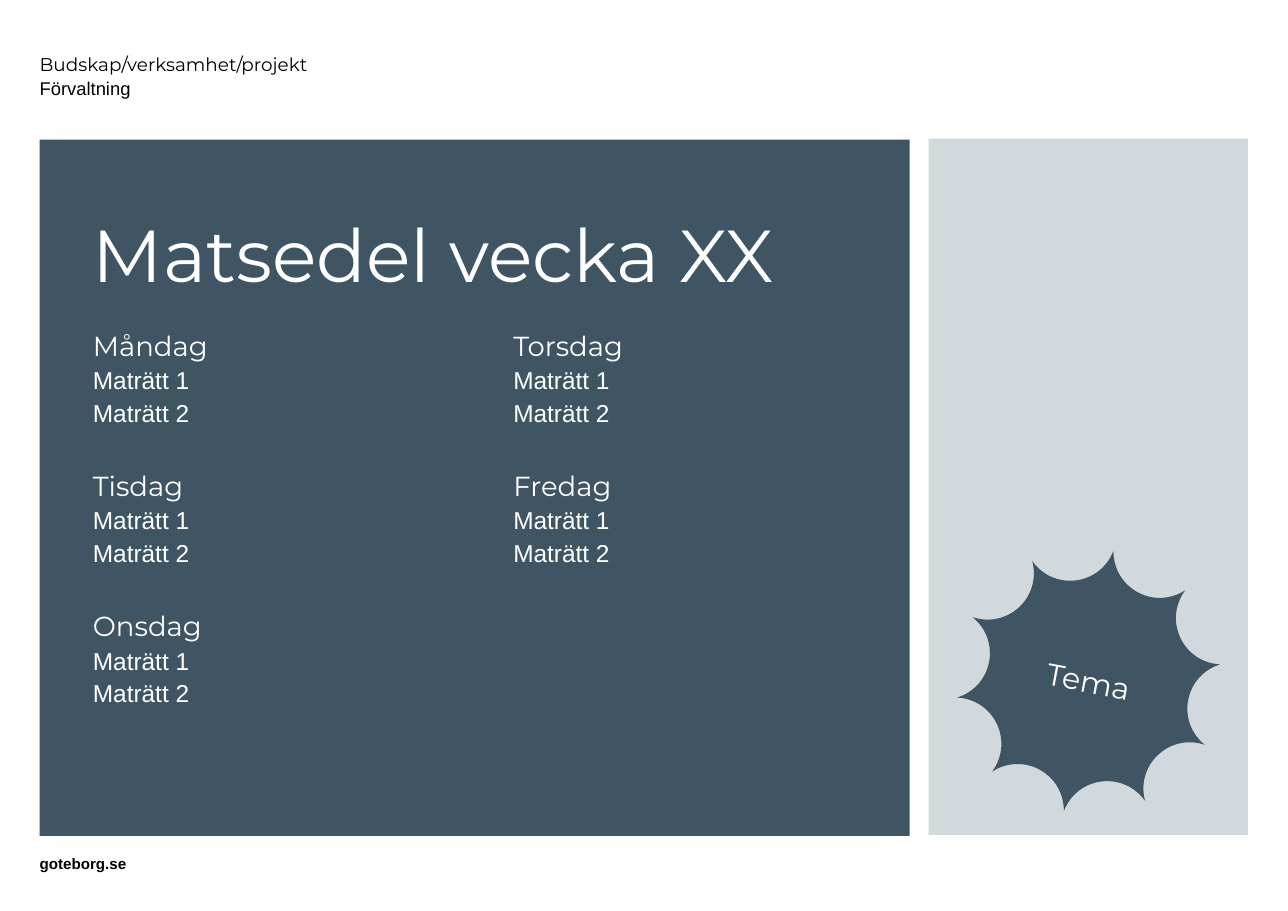
from dataclasses import dataclass
from math import cos, radians, sin

from lxml.etree import SubElement
from pptx import Presentation
from pptx.dml.color import RGBColor
from pptx.enum.shapes import MSO_SHAPE
from pptx.enum.text import MSO_ANCHOR, MSO_AUTO_SIZE, PP_ALIGN
from pptx.oxml.ns import qn
from pptx.util import Cm, Pt


@dataclass(frozen=True)
class Theme:
    slate: RGBColor = RGBColor(0x3F, 0x55, 0x64)
    mist: RGBColor = RGBColor(0xD1, 0xD9, 0xDC)
    white: RGBColor = RGBColor(0xFF, 0xFF, 0xFF)
    black: RGBColor = RGBColor(0, 0, 0)
    display: str = "Montserrat"
    body: str = "Arial"
    title_size: float = 67.9
    theme_size: float = 28
    day_size: float = 25.4
    dish_size: float = 22.6
    header_size: float = 17
    footer_size: float = 14


theme = Theme()


def prepare_frame(shape, anchor, side=0, edge=0):
    frame = shape.text_frame
    frame.word_wrap = True
    frame.auto_size = MSO_AUTO_SIZE.NONE
    frame.vertical_anchor = anchor
    frame.margin_left = frame.margin_right = Cm(side)
    frame.margin_top = frame.margin_bottom = Cm(edge)
    return frame


def add_line(frame, text, font, size, color, spacing=None, before=0, align=PP_ALIGN.LEFT, bold=False):
    paragraph = frame.paragraphs[0]
    if paragraph.runs:
        paragraph = frame.add_paragraph()
    paragraph.alignment = align
    paragraph.line_spacing = spacing
    paragraph.space_before = Pt(before)
    run = paragraph.add_run()
    run.text = text
    run.font.name = font
    run.font.size = Pt(size)
    run.font.bold = bold
    run.font.color.rgb = color


presentation = Presentation()
presentation.slide_width = Cm(42)
presentation.slide_height = Cm(29.7)
slide = presentation.slides.add_slide(presentation.slide_layouts[5])
shapes = slide.shapes

panels = [(30.28, 4.52, 10.41, theme.mist), (1.29, 4.55, 28.37, theme.slate)]
for left, top, width, color in panels:
    panel = shapes.add_shape(MSO_SHAPE.RECTANGLE, Cm(left), Cm(top), Cm(width), Cm(22.7))
    panel.shadow.inherit = False
    panel.fill.solid()
    panel.fill.fore_color.rgb = color
    panel.line.fill.background()

title = shapes.title
title.left, title.top, title.width, title.height = Cm(3.03), Cm(6.99), Cm(25.86), Cm(2.9)
panel.element.addnext(title.element)
frame = prepare_frame(title, MSO_ANCHOR.MIDDLE)
add_line(frame, "Matsedel vecka XX", theme.display, theme.title_size, theme.white, 0.9)

menu_columns = [(3.03, ["Måndag", "Tisdag", "Onsdag"]), (16.74, ["Torsdag", "Fredag"])]
for left, days in menu_columns:
    menu = shapes.add_textbox(Cm(left), Cm(10.84), Cm(12.17), Cm(15.06))
    frame = prepare_frame(menu, MSO_ANCHOR.TOP)
    for index, day in enumerate(days):
        gap = 41.9 if index else 0
        add_line(frame, day, theme.display, theme.day_size, theme.white, 0.9, gap)
        for dish in ["Maträtt 1", "Maträtt 2"]:
            add_line(frame, dish, theme.body, theme.dish_size, theme.white, 0.9, 5.8)

center_x, center_y = 35.5, 22.2
tip_radius, control_radius = 4.32, 3.13
tip_count = 10
tip_angle = 360 / tip_count
outline = [(center_x, center_y - tip_radius)]
for tip in range(tip_count):
    start, end = tip * tip_angle, (tip + 1) * tip_angle
    for radius, angle in [(control_radius, start + 4), (control_radius, end - 4), (tip_radius, end)]:
        x = center_x + radius * sin(radians(angle))
        y = center_y - radius * cos(radians(angle))
        outline.append((x, y))
outline = [(1000 * x, 1000 * y) for x, y in outline]

builder = shapes.build_freeform(*outline[0], scale=Cm(1) / 1000)
builder.add_line_segments(outline[1:], close=True)
star = builder.convert_to_shape()
segments = list(star.element.iter(qn("a:lnTo")))
for index in range(0, 3 * tip_count, 3):
    arc = SubElement(segments[index].getparent(), qn("a:cubicBezTo"))
    segments[index].addprevious(arc)
    for segment in segments[index:index + 3]:
        arc.append(segment[0])
        segment.getparent().remove(segment)
star.rotation = 10.8
star.shadow.inherit = False
star.fill.solid()
star.fill.fore_color.rgb = theme.slate
star.line.fill.background()
frame = prepare_frame(star, MSO_ANCHOR.MIDDLE, 0.7, 0.2)
add_line(frame, "Tema", theme.display, theme.theme_size, theme.white, align=PP_ALIGN.CENTER)

header = shapes.add_textbox(Cm(1.29), Cm(1.85), Cm(19.81), Cm(1.22))
frame = prepare_frame(header, MSO_ANCHOR.MIDDLE)
for text, font in [("Budskap/verksamhet/projekt", theme.display), ("Förvaltning", theme.body)]:
    add_line(frame, text, font, theme.header_size, theme.black, Pt(22))

footer = shapes.add_textbox(Cm(1.29), Cm(27.84), Cm(18.62), Cm(0.61))
frame = prepare_frame(footer, MSO_ANCHOR.MIDDLE)
add_line(frame, "goteborg.se", theme.body, theme.footer_size, theme.black, bold=True)

presentation.save("out.pptx")
